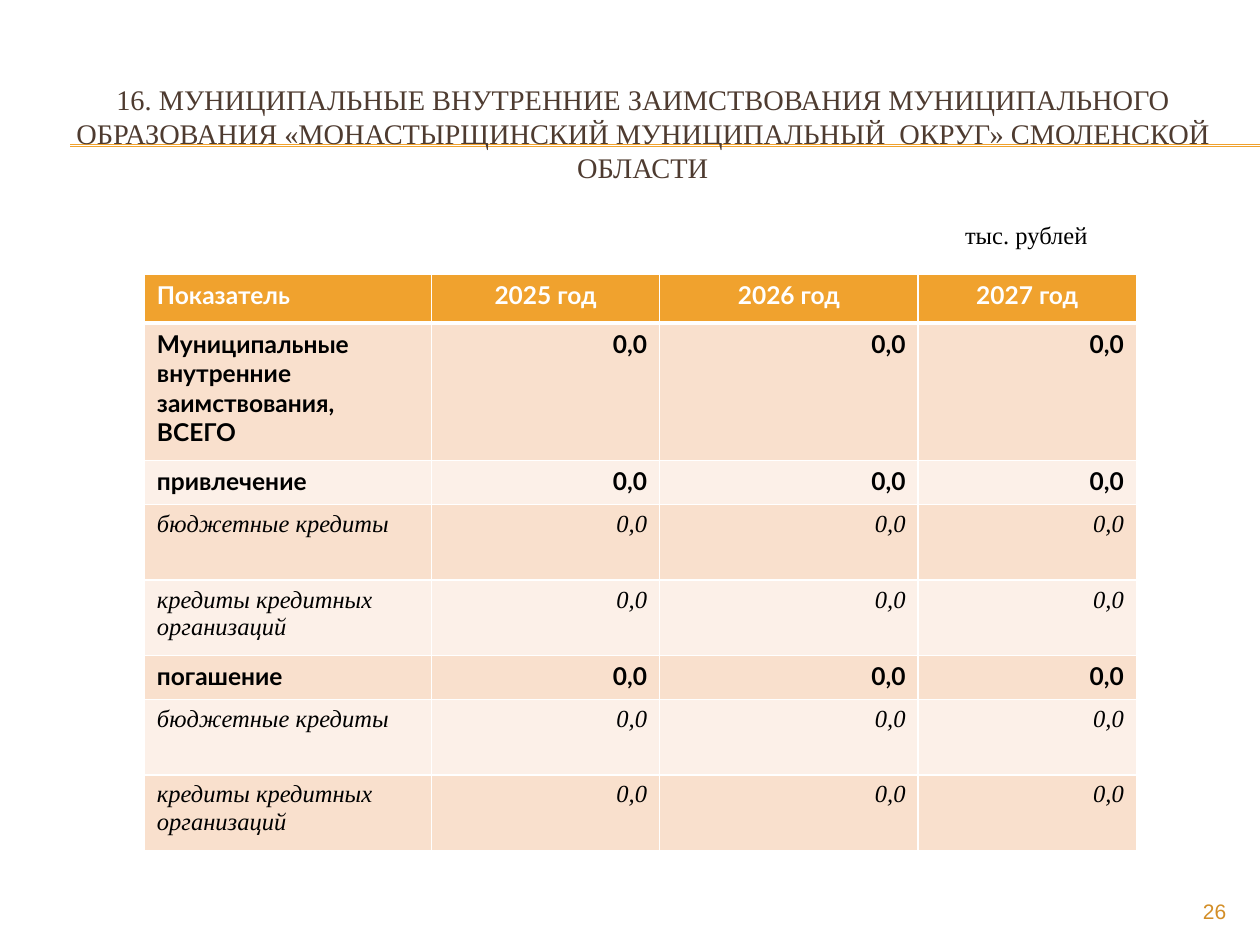
import pptx
import pptx.util
from lxml import etree
from pptx.dml.color import RGBColor
from pptx.enum.shapes import MSO_CONNECTOR
from pptx.enum.text import MSO_ANCHOR, MSO_AUTO_SIZE, PP_ALIGN
from pptx.oxml.ns import qn
from pptx.util import Cm, Pt

COLORS = {
    "accent": "F0A22E", "title": "4E3B30", "number": "D38E27",
    "dark_band": "F9E0CD", "light_band": "FCF0E8",
    "white": "FFFFFF", "black": "000000",
}
SERIF = "Times New Roman"

COLUMNS = [5.79, 4.6, 5.21, 4.4]
ZEROS = ["0,0"] * 3
LOANS = [("бюджетные кредиты", 1.52, "detail"),
         ("кредиты кредитных организаций", 1.52, "detail")]
ROWS = [
    ("Муниципальные внутренние\nзаимствования, ВСЕГО", 2.77, "total"),
    ("привлечение", 0.89, "total"), *LOANS,
    ("погашение", 0.89, "total"), *LOANS,
]


def rgb(name):
    return RGBColor.from_string(COLORS[name])


def format_text(tf, size, font, color, align, bold=False, italic=False):
    for p in tf.paragraphs:
        p.alignment = align
        for r in p.runs:
            r.font.size = Pt(size)
            r.font.name = font
            r.font.color.rgb = rgb(color)
            r.font.bold = bold
            r.font.italic = italic


def add_rules(s, left, top, right):
    """Draw the double line behind the title."""
    for y in (top, top + 0.03):
        line = s.shapes.add_connector(MSO_CONNECTOR.STRAIGHT, Cm(left), Cm(y), Cm(right), Cm(y))
        line.line.color.rgb = rgb("accent")
        line.line.width = Pt(0.75)
        etree.SubElement(line._element.spPr, qn("a:effectLst"))


def place_title(s, text, left, top, width, height):
    sp = s.shapes.title
    sp.left, sp.top, sp.width, sp.height = Cm(left), Cm(top), Cm(width), Cm(height)
    # Keep the title in front of the lines
    s.shapes._spTree.append(sp._element)
    tf = sp.text_frame
    tf.text = text
    tf.word_wrap = True
    tf.auto_size = MSO_AUTO_SIZE.NONE
    tf.vertical_anchor = MSO_ANCHOR.MIDDLE
    format_text(tf, 16.2, SERIF, "title", PP_ALIGN.CENTER)


def add_label(s, text, left, top, width, height, **style):
    tf = s.shapes.add_textbox(Cm(left), Cm(top), Cm(width), Cm(height)).text_frame
    tf.word_wrap = True
    tf.text = text
    format_text(tf, **style)


def set_borders(cell, **widths):
    """Add white borders, which must come before the fill in the cell XML."""
    tcPr = cell._tc.get_or_add_tcPr()
    for i, side in enumerate(("L", "R", "T", "B")):
        ln = etree.Element(qn(f"a:ln{side}"), w=str(Pt(widths.get(side, 1))))
        fill = etree.SubElement(ln, qn("a:solidFill"))
        etree.SubElement(fill, qn("a:srgbClr"), val=COLORS["white"])
        tcPr.insert(i, ln)


def add_borrowing_table(s, left, top):
    rows = [("Показатель", 0.99, "header"), *ROWS]
    height = sum(row[1] for row in rows)
    table = s.shapes.add_table(len(rows), len(COLUMNS), Cm(left), Cm(top),
                               Cm(sum(COLUMNS)), Cm(height)).table
    for column, width in zip(table.columns, COLUMNS):
        column.width = Cm(width)
    for i, (label, row_height, kind) in enumerate(rows):
        table.rows[i].height = Cm(row_height)
        header, detail = kind == "header", kind == "detail"
        values = ["2025 год", "2026 год", "2027 год"] if header else ZEROS
        band = "accent" if header else "dark_band" if i % 2 else "light_band"
        value_align = PP_ALIGN.CENTER if header else PP_ALIGN.RIGHT
        edges = {"B": 3} if header else {"T": 3} if i == 1 else {}
        for j, text in enumerate([label, *values]):
            cell = table.cell(i, j)
            cell.text_frame.text = text
            cell.fill.solid()
            cell.fill.fore_color.rgb = rgb(band)
            set_borders(cell, **edges)
            format_text(cell.text_frame, 14, SERIF if detail else "Lato",
                        "white" if header else "black",
                        value_align if j else PP_ALIGN.LEFT,
                        bold=not detail, italic=detail)


def main():
    prs = pptx.Presentation()
    prs.slide_width, prs.slide_height = Cm(25.4), Cm(19.05)
    s = prs.slides.add_slide(prs.slide_layouts[5])
    add_rules(s, 1.42, 2.92, 25.4)
    place_title(s, "16. МУНИЦИПАЛЬНЫЕ ВНУТРЕННИЕ ЗАИМСТВОВАНИЯ МУНИЦИПАЛЬНОГО "
                   "ОБРАЗОВАНИЯ «МОНАСТЫРЩИНСКИЙ МУНИЦИПАЛЬНЫЙ  ОКРУГ» "
                   "СМОЛЕНСКОЙ ОБЛАСТИ", 0.89, 1.52, 24.13, 2.34)
    add_borrowing_table(s, 2.91, 5.52)
    add_label(s, "26", 22.86, 17.98, 2.11, 0.69,
              size=12, font="Arial", color="number", align=PP_ALIGN.RIGHT)
    add_label(s, "тыс. рублей", 18.29, 4.32, 4.8, 0.86,
              size=14, font=SERIF, color="black", align=PP_ALIGN.CENTER)
    prs.save("out.pptx")


if __name__ == "__main__":
    main()
